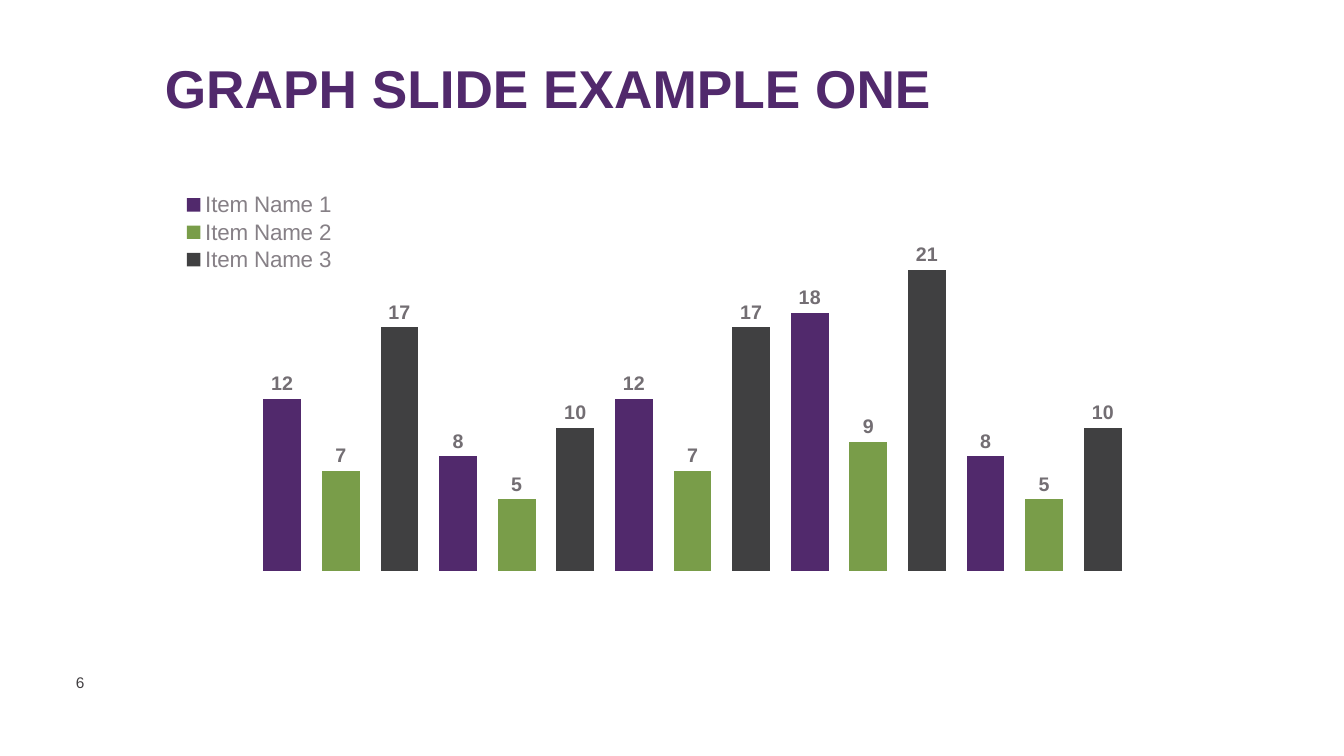
import pptx
import pptx.util
import pptx.chart.data
import pptx.dml.color
import pptx.enum.chart
import pptx.enum.text
import pptx.oxml

PX = 9071.43
HUES = {"plum": "51296C", "leaf": "799D49", "coal": "404041",
        "ink": "423F42", "key": "868086", "tag": "736E73"}


def style(font, size, hue, bold=False):
    font.name = "Arial"
    font.size = pptx.util.Pt(size)
    font.bold = bold
    font.color.rgb = pptx.dml.color.RGBColor.from_string(HUES[hue])


def layout(inner):
    return pptx.oxml.parse_xml(
        '<c:layout xmlns:c="http://schemas.openxmlformats.org/drawingml/2006/chart">'
        f'<c:manualLayout>{inner}</c:manualLayout></c:layout>')


deck = pptx.Presentation()
deck.slide_width = round(1344 * PX)
deck.slide_height = round(756 * PX)
slide = deck.slides.add_slide(deck.slide_layouts[6])

anchor = pptx.enum.text.MSO_ANCHOR
for words, spot, size, hue, bold, hold, gap in [
    ("GRAPH SLIDE EXAMPLE ONE", (155, 46, 1000, 91), 38, "plum", True, anchor.MIDDLE, 0.9),
    ("6", (66, 668, 58, 54), 11, "ink", False, anchor.TOP, 1.0),
]:
    frame = slide.shapes.add_textbox(*(round(n * PX) for n in spot)).text_frame
    frame.word_wrap = True
    frame.vertical_anchor = hold
    line = frame.paragraphs[0]
    line.line_spacing = gap
    run = line.add_run()
    run.text = words
    style(run.font, size, hue, bold)

items = [
    ("Item Name 3", "coal", 2, [17, 10, 17, 21, 10]),
    ("Item Name 2", "leaf", 1, [7, 5, 7, 9, 5]),
    ("Item Name 1", "plum", 0, [12, 8, 12, 18, 8]),
]
data = pptx.chart.data.CategoryChartData()
data.categories = [str(n) for n in range(1, 16)]
for name, hue, start, nums in items:
    vals = [None] * 15
    vals[start::3] = nums
    data.add_series(name, vals)

chart = slide.shapes.add_chart(
    pptx.enum.chart.XL_CHART_TYPE.COLUMN_STACKED,
    *(round(n * PX) for n in (156, 164, 1032, 427)), data).chart
style(chart.font, 10, "ink")
chart.has_title = False
for axis in (chart.category_axis, chart.value_axis):
    axis.has_major_gridlines = False
    axis.visible = False
chart.value_axis.minimum_scale = 0
chart.value_axis.maximum_scale = 25

plot = chart.plots[0]
plot.gap_width = 55
plot.overlap = 100
plot.vary_by_categories = False
for bars, (name, hue, start, nums) in zip(plot.series, items):
    bars.format.fill.solid()
    bars.format.fill.fore_color.rgb = pptx.dml.color.RGBColor.from_string(HUES[hue])
    bars.data_labels.show_value = True
    for label in [bars.data_labels] + [bars.points[n].data_label for n in range(start, 15, 3)]:
        style(label.font, 14, "tag", True)
        label.position = pptx.enum.chart.XL_LABEL_POSITION.INSIDE_END

chart.has_legend = True
chart.legend.position = pptx.enum.chart.XL_LEGEND_POSITION.RIGHT
chart.legend.include_in_layout = False
style(chart.legend.font, 16, "key")

root = chart._chartSpace
for node in root.xpath(".//c:plotArea/c:layout | .//c:legend/c:layout"):
    node.getparent().remove(node)
edge = '<c:xMode val="edge"/><c:yMode val="edge"/>'
root.xpath(".//c:plotArea")[0].insert(0, layout(
    '<c:layoutTarget val="inner"/>' + edge +
    '<c:x val="0.094"/><c:y val="0.113"/><c:w val="0.852"/><c:h val="0.841"/>'))
root.xpath(".//c:legendPos")[0].addnext(layout(
    edge + '<c:x val="0.02"/><c:y val="0.06"/><c:w val="0.16"/><c:h val="0.2"/>'))
for node in root.xpath(".//c:dLbl/c:idx"):
    node.addnext(layout('<c:x val="0"/><c:y val="-0.07"/>'))

deck.save("out.pptx")
